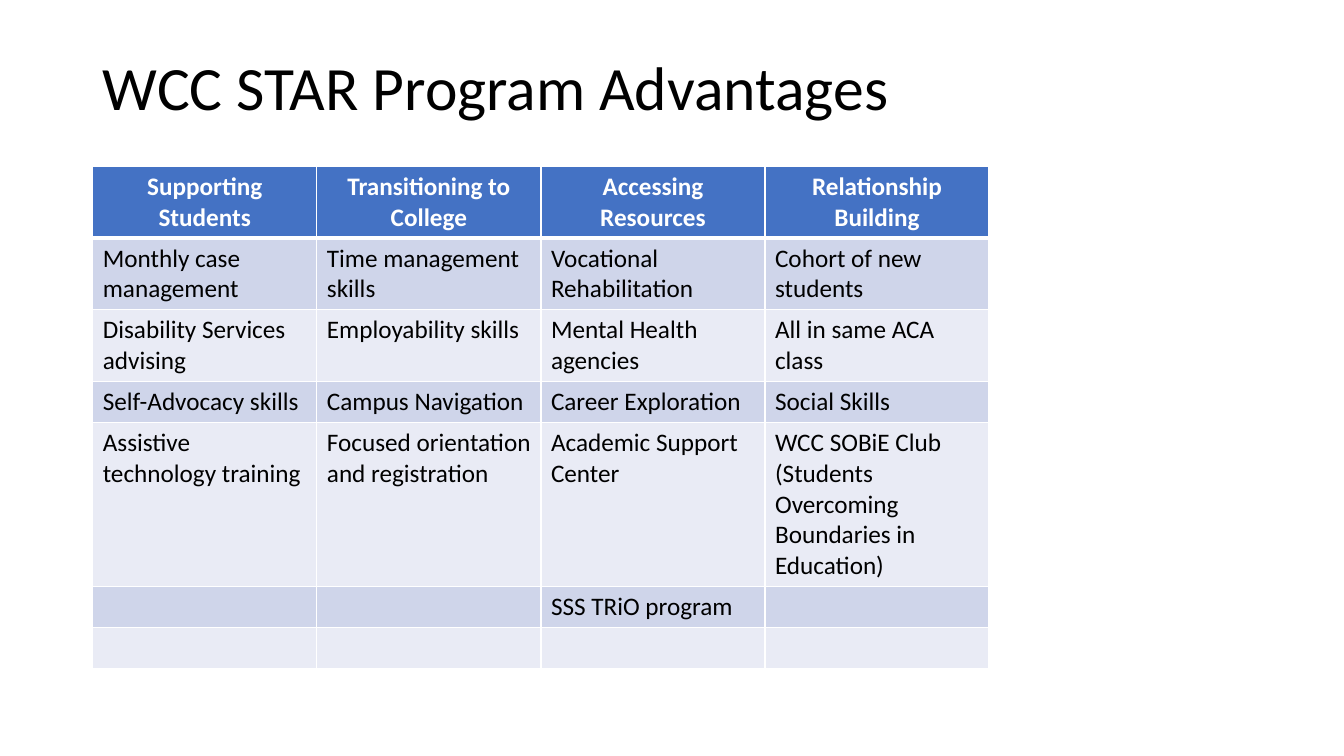
from dataclasses import dataclass

from lxml import etree
from pptx import Presentation
from pptx import util as u
from pptx.dml import color
from pptx.enum import text
from pptx.oxml import ns


@dataclass(frozen=True)
class Theme:
    font: str = "Calibri"
    title_size: int = 44
    table_size: int = 18
    black: str = "000000"
    white: str = "FFFFFF"
    header: str = "4472C4"
    bands: tuple = ("CFD5EA", "E9EBF5")
    border: float = 1
    header_border: float = 3


THEME = Theme()
TITLE = "WCC STAR Program Advantages"
ADVANTAGES = [
    ["Supporting Students", "Transitioning to College", "Accessing Resources", "Relationship Building"],
    ["Monthly case management", "Time management skills", "Vocational Rehabilitation", "Cohort of new students"],
    ["Disability Services advising", "Employability skills", "Mental Health agencies", "All in same ACA class"],
    ["Self-Advocacy skills", "Campus Navigation", "Career Exploration", "Social Skills"],
    ["Assistive technology training", "Focused orientation and registration", "Academic Support Center",
     "WCC SOBiE Club (Students Overcoming Boundaries in Education)"],
    ["", "", "SSS TRiO program", ""],
    ["", "", "", ""],
]


def write_text(frame, words, *, size, ink=THEME.black, bold=False,
               align=text.PP_ALIGN.LEFT, spacing=1.0):
    paragraph = frame.paragraphs[0]
    paragraph.alignment = align
    paragraph.line_spacing = spacing
    paragraph.font.size = u.Pt(size)
    if words:
        run = paragraph.add_run()
        run.text = words
        run.font.name = THEME.font
        run.font.size = u.Pt(size)
        run.font.bold = bold
        run.font.color.rgb = color.RGBColor.from_string(ink)


def add_border(cell, side, width):
    properties = cell._tc.get_or_add_tcPr()
    line = etree.SubElement(properties, ns.qn(f"a:ln{side}"), w=str(u.Pt(width)))
    fill = etree.SubElement(line, ns.qn("a:solidFill"))
    etree.SubElement(fill, ns.qn("a:srgbClr"), val=THEME.white)


def format_cell(cell, words, row):
    is_header = row == 0
    widths = {
        "L": THEME.border,
        "R": THEME.border,
        "T": THEME.header_border if row == 1 else THEME.border,
        "B": THEME.header_border if is_header else THEME.border,
    }
    for side, width in widths.items():
        add_border(cell, side, width)
    cell.fill.solid()
    cell.fill.fore_color.rgb = color.RGBColor.from_string(
        THEME.header if is_header else THEME.bands[(row - 1) % 2])
    write_text(cell.text_frame, words, size=THEME.table_size, bold=is_header,
               ink=THEME.white if is_header else THEME.black,
               align=text.PP_ALIGN.CENTER if is_header else text.PP_ALIGN.LEFT)


def place_title(slide, left, top, width, height):
    title = slide.shapes.title
    title.left, title.top, title.width, title.height = left, top, width, height
    frame = title.text_frame
    frame.word_wrap = True
    frame.auto_size = text.MSO_AUTO_SIZE.NONE
    frame.vertical_anchor = text.MSO_ANCHOR.MIDDLE
    write_text(frame, TITLE, size=THEME.title_size, spacing=0.9)


def place_table(slide, left, top, width, row_height):
    rows, columns = len(ADVANTAGES), len(ADVANTAGES[0])
    table = slide.shapes.add_table(rows, columns, left, top, width, row_height * rows).table
    for row, entries in enumerate(ADVANTAGES):
        for column, words in enumerate(entries):
            format_cell(table.cell(row, column), words, row)


def main():
    presentation = Presentation()
    presentation.slide_width = u.Inches(13.33)
    presentation.slide_height = u.Inches(7.5)
    slide = presentation.slides.add_slide(presentation.slide_layouts.get_by_name("Title Only"))
    margin = u.Inches(0.92)
    place_title(slide, margin, u.Inches(0.4), u.Inches(11.5), u.Inches(1))
    place_table(slide, margin, u.Inches(1.65), u.Inches(8.89), u.Inches(0.41))
    presentation.save("out.pptx")


if __name__ == "__main__":
    main()
